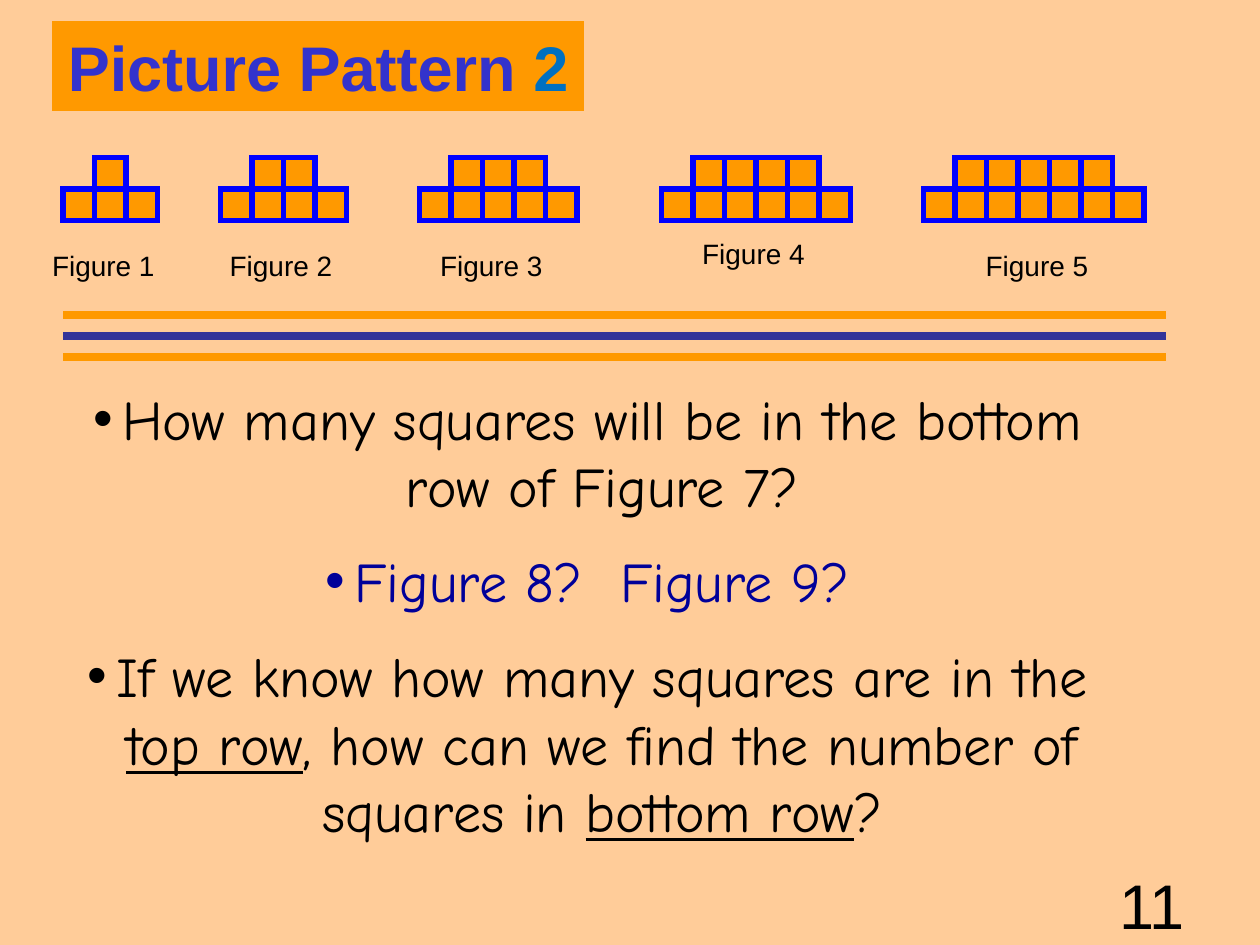
import pptx
import pptx.util
import pptx.dml.color
import pptx.enum.shapes
import pptx.enum.text
import pptx.oxml.ns
import lxml.etree

Inches, Pt = pptx.util.Inches, pptx.util.Pt
ALIGN = pptx.enum.text.PP_ALIGN
ANCHOR = pptx.enum.text.MSO_ANCHOR

# Content
TITLE = [("Picture Pattern ", {}), ("2", {"color": "accent"})]
# squares in the top row, left edge, label centre, label top
FIGURES = [
    (1, 0.5, 0.82, 1.92),
    (2, 1.75, 2.23, 1.92),
    (3, 3.33, 3.9, 1.92),
    (4, 5.25, 5.98, 1.83),
    (5, 7.33, 8.23, 1.92),
]
QUESTIONS = [
    [("How many squares will be in the bottom row of Figure 7?", {})],
    [("Figure 8?  Figure 9?", {"color": "navy"})],
    [("If we know how many squares are in the ", {}),
     ("top row", {"underline": True}),
     (", how can we find the number of squares in ", {}),
     ("bottom row", {"underline": True}),
     ("?", {})],
]
RULES = ["orange", "indigo", "orange"]
PAGE = "11"

THEME = {
    "colors": {"back": "FFCC99", "orange": "FF9900", "blue": "0000FF",
               "indigo": "333399", "title": "3333CC", "accent": "0070C0",
               "navy": "000099", "text": "000000"},
    "sizes": {"title": 36, "body": 32, "label": 16, "page": 36},
    "fonts": {"head": "Arial", "body": "Comic Neue"},
}

# Grid, in inches
SIDE, ROW_TOP = 0.25, 1.25
LABEL_WIDTH = 0.9
RULE_LEFT, RULE_RIGHT, RULE_TOP, RULE_GAP = 0.5, 9.25, 2.5, 1 / 6
HANG = 0.23


def rgb(name):
    return pptx.dml.color.RGBColor.from_string(THEME["colors"][name])


def add_xml(parent, tag, **attributes):
    lxml.etree.SubElement(parent, pptx.oxml.ns.qn(tag), attributes)


def place(shape, *box):
    shape.left, shape.top, shape.width, shape.height = map(Inches, box)


def paint(shape, fill, line, width):
    shape.fill.solid()
    shape.fill.fore_color.rgb = rgb(fill)
    shape.line.color.rgb = rgb(line)
    shape.line.width = Pt(width)
    add_xml(shape.line._get_or_add_ln(), "a:miter", lim="800000")


def add_text(p, text, size="body", font="head", color="text", bold=False,
             underline=False, align=ALIGN.CENTER):
    p.alignment = align
    r = p.add_run()
    r.text = text
    r.font.size = Pt(THEME["sizes"][size])
    r.font.name = THEME["fonts"][font]
    r.font.color.rgb = rgb(color)
    r.font.bold = bold
    r.font.underline = underline


def add_bullet(p):
    pPr = p._p.get_or_add_pPr()
    pPr.set("marL", str(Inches(HANG)))
    pPr.set("indent", str(-Inches(HANG)))
    add_xml(pPr, "a:buFont", typeface="Arial")
    add_xml(pPr, "a:buChar", char="•")


def add_figure(s, top_count, left):
    group = s.shapes.add_group_shape()
    rows = [(top_count, left + SIDE), (top_count + 2, left)]
    for row, (count, start) in enumerate(rows):
        for col in range(count):
            square = group.shapes.add_shape(
                pptx.enum.shapes.MSO_SHAPE.RECTANGLE,
                Inches(start + col * SIDE), Inches(ROW_TOP + row * SIDE),
                Inches(SIDE), Inches(SIDE))
            square.shadow.inherit = False
            paint(square, "orange", "blue", 3)


def add_label(s, text, center, top):
    label = s.shapes.add_textbox(0, 0, 0, 0)
    place(label, center - LABEL_WIDTH / 2, top, LABEL_WIDTH, 0.25)
    tf = label.text_frame
    tf.word_wrap = False
    tf.margin_left = tf.margin_right = tf.margin_bottom = 0
    tf.margin_top = Inches(0.05)
    add_text(tf.paragraphs[0], text, size="label")


def add_rule(s, y, color):
    rule = s.shapes.add_connector(
        pptx.enum.shapes.MSO_CONNECTOR.STRAIGHT,
        Inches(RULE_LEFT), Inches(y), Inches(RULE_RIGHT), Inches(y))
    rule.line.color.rgb = rgb(color)
    rule.line.width = Pt(4.5)
    add_xml(rule._element.spPr, "a:effectLst")


def main():
    prs = pptx.Presentation()
    prs.slide_width, prs.slide_height = Inches(10), Inches(7.5)
    s = prs.slides.add_slide(prs.slide_layouts[1])
    s.background.fill.solid()
    s.background.fill.fore_color.rgb = rgb("back")
    title, body = s.placeholders

    # Title
    place(title, 0.42, 0.17, 4.21, 0.71)
    paint(title, "orange", "orange", 0.75)
    tf = title.text_frame
    tf.word_wrap = False
    tf.vertical_anchor = ANCHOR.MIDDLE
    for text, style in TITLE:
        add_text(tf.paragraphs[0], text,
                 **{"size": "title", "color": "title", "bold": True, **style})

    # Figures and their labels
    for number, (top_count, left, center, top) in enumerate(FIGURES, 1):
        add_figure(s, top_count, left)
        add_label(s, f"Figure {number}", center, top)

    # Dividing rules
    for i, color in enumerate(RULES):
        add_rule(s, RULE_TOP + i * RULE_GAP, color)

    # Questions
    place(body, 0.5, 3, 8.33, 4.28)
    tf = body.text_frame
    tf.word_wrap = True
    tf.auto_size = pptx.enum.text.MSO_AUTO_SIZE.NONE
    tf.vertical_anchor = ANCHOR.TOP
    for i, runs in enumerate(QUESTIONS):
        p = tf.add_paragraph() if i else tf.paragraphs[0]
        p.space_before = Pt(THEME["sizes"]["body"] / 2)
        add_bullet(p)
        for text, style in runs:
            add_text(p, text, font="body", **style)

    # Page number
    page = s.shapes.add_textbox(0, 0, 0, 0)
    place(page, 7.17, 6.83, 2.33, 0.52)
    page.text_frame.word_wrap = True
    add_text(page.text_frame.paragraphs[0], PAGE, size="page", align=ALIGN.RIGHT)

    prs.save("out.pptx")


if __name__ == "__main__":
    main()
